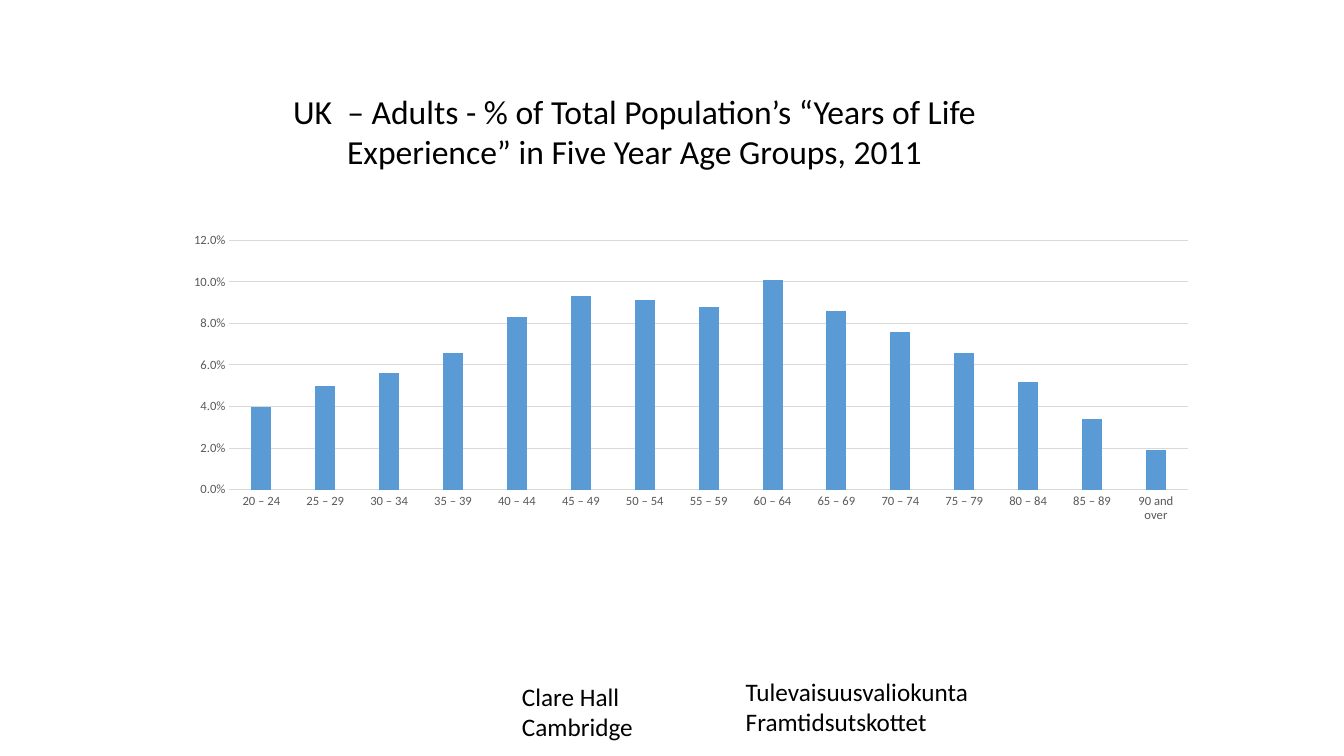
from pptx import Presentation, util as u
from pptx.chart.data import CategoryChartData
from pptx.dml.color import RGBColor
from pptx.enum import chart as ch, text

FONT = "Calibri"
COLORS = {"text": "000000", "label": "595959", "grid": "D9D9D9", "bar": "5B9BD5"}

TITLE = ("UK  – Adults - % of Total Population’s “Years of Life Experience” "
         "in Five Year Age Groups, 2011")
TITLE_BOX = (198.72, 61.2, 509.04, 68.4)
FOOTERS = [
    (["Clare Hall", "Cambridge"], (365.76, 483.12, 95.04, 51.12)),
    (["Tulevaisuusvaliokunta", "Framtidsutskottet"], (525.6, 479.52, 174.96, 72.72)),
]
AGE_GROUPS = [f"{age} ‒ {age + 4}" for age in range(20, 90, 5)] + ["90 and over"]
SHARES = [0.04, 0.05, 0.056, 0.066, 0.083, 0.093, 0.091, 0.088,
          0.101, 0.086, 0.076, 0.066, 0.052, 0.034, 0.019]
CHART_BOX = (123.84, 162, 739.44, 216)


def color(name):
    return RGBColor.from_string(COLORS[name])


def points(box):
    return [u.Pt(length) for length in box]


def style_font(font, size, name):
    font.name = FONT
    font.size = u.Pt(size)
    font.color.rgb = color(name)


def add_text(slide, lines, box, size=18, align=text.PP_ALIGN.LEFT, wrap=True):
    frame = slide.shapes.add_textbox(*points(box)).text_frame
    frame.word_wrap = wrap
    frame.text = "\n".join(lines)
    for paragraph in frame.paragraphs:
        paragraph.alignment = align
        style_font(paragraph.runs[0].font, size, "text")


def style_line(line):
    line.color.rgb = color("grid")
    line.width = u.Pt(0.75)


def add_share_chart(slide):
    shares = CategoryChartData(number_format="0.0%")
    shares.categories = AGE_GROUPS
    shares.add_series("Series 1", SHARES)
    chart = slide.shapes.add_chart(
        ch.XL_CHART_TYPE.COLUMN_CLUSTERED, *points(CHART_BOX), shares).chart
    chart.has_legend = False
    chart.has_title = False
    style_font(chart.font, 10, "text")

    plot = chart.plots[0]
    plot.gap_width = 219
    plot.overlap = -27
    plot.vary_by_categories = False
    bars = plot.series[0].format.fill
    bars.solid()
    bars.fore_color.rgb = color("bar")

    ages, percent = chart.category_axis, chart.value_axis
    for axis in (ages, percent):
        axis.major_tick_mark = axis.minor_tick_mark = ch.XL_TICK_MARK.NONE
        style_font(axis.tick_labels.font, 9, "label")
    style_line(ages.format.line)
    style_line(percent.major_gridlines.format.line)
    percent.format.line.fill.background()
    percent.minimum_scale, percent.maximum_scale = 0, 0.12
    percent.major_unit = 0.02
    percent.tick_labels.number_format = "0.0%"
    percent.tick_labels.number_format_is_linked = False


def main():
    deck = Presentation()
    deck.slide_width, deck.slide_height = u.Pt(960), u.Pt(540)
    slide = deck.slides.add_slide(deck.slide_layouts[6])
    for lines, box in FOOTERS:
        add_text(slide, lines, box)
    add_share_chart(slide)
    add_text(slide, [TITLE], TITLE_BOX, size=24, align=text.PP_ALIGN.CENTER)
    deck.save("out.pptx")


if __name__ == "__main__":
    main()
